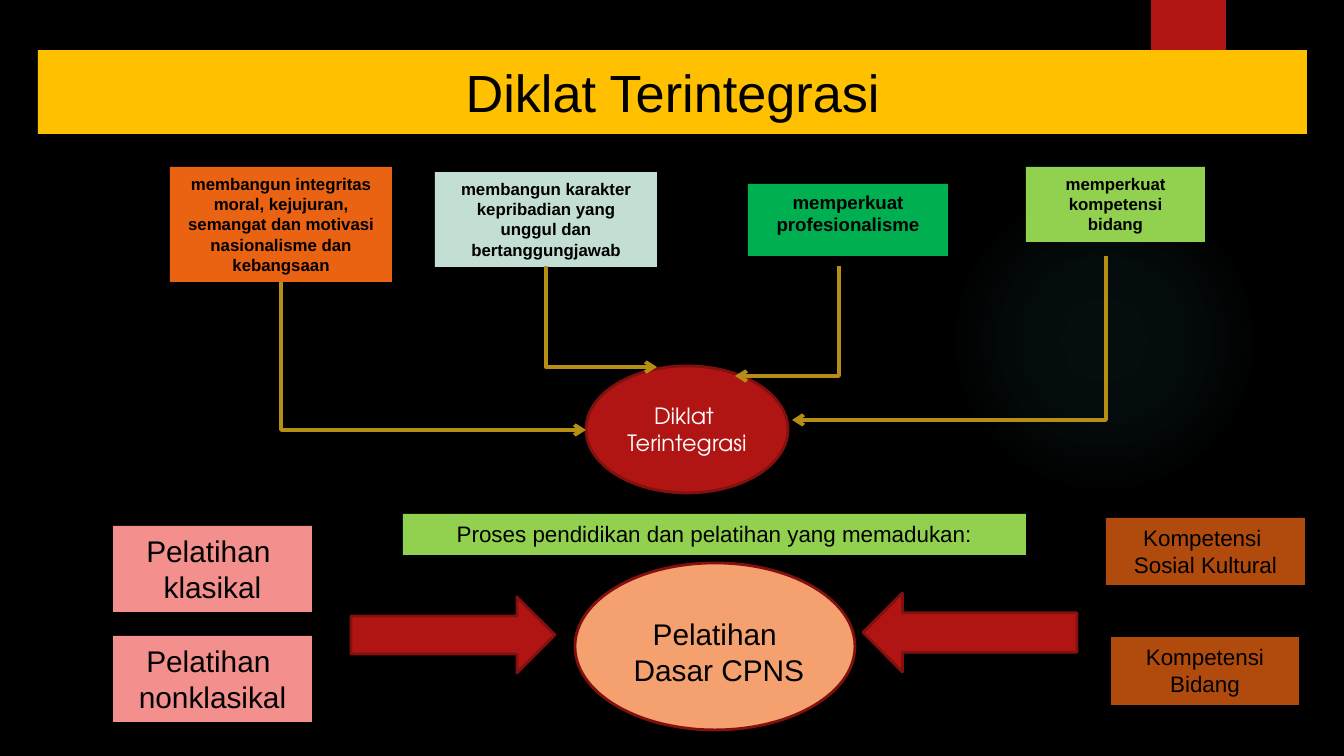
from lxml import etree
from pptx import Presentation
from pptx.dml.color import RGBColor
from pptx.enum.shapes import MSO_CONNECTOR, MSO_SHAPE
from pptx.enum.text import MSO_ANCHOR, PP_ALIGN
from pptx.oxml import parse_xml
from pptx.oxml.ns import nsdecls, qn
from pptx.util import Pt

PX = 914400 / 134.4
RECT, OVAL = MSO_SHAPE.RECTANGLE, MSO_SHAPE.OVAL
RIGHT_ARROW, LEFT_ARROW = MSO_SHAPE.RIGHT_ARROW, MSO_SHAPE.LEFT_ARROW
ELBOW = MSO_CONNECTOR.ELBOW
CENTER = PP_ALIGN.CENTER
TOP, MIDDLE = MSO_ANCHOR.TOP, MSO_ANCHOR.MIDDLE

BLACK = RGBColor(0x00, 0x00, 0x00)
WHITE = RGBColor(0xFF, 0xFF, 0xFF)
RED = RGBColor(0xB0, 0x15, 0x13)
DARK_RED = RGBColor(0x82, 0x10, 0x0E)
AMBER = RGBColor(0xFF, 0xC0, 0x00)
GOLD = RGBColor(0xB6, 0x8E, 0x15)
ORANGE = RGBColor(0xEA, 0x63, 0x12)
MINT = RGBColor(0xC3, 0xDE, 0xD3)
GREEN = RGBColor(0x00, 0xB0, 0x50)
LIME = RGBColor(0x92, 0xD0, 0x50)
PINK = RGBColor(0xF3, 0x8F, 0x8D)
BROWN = RGBColor(0xB0, 0x4A, 0x0D)
PEACH = RGBColor(0xF4, 0xA1, 0x6F)
GLOW_STOPS = ((0, 7), (36, 6), (69, 0))


def px(*lengths):
    """Turn pixel lengths into EMU."""
    return [round(length * PX) for length in lengths]


def write(frame, lines, size, color=BLACK, bold=False, font="Arial", anchor=TOP):
    """Fill a text frame with centred paragraphs."""
    frame.word_wrap = True
    frame.vertical_anchor = anchor
    frame.text = "\n".join(lines)
    for paragraph in frame.paragraphs:
        paragraph.alignment = CENTER
        paragraph.font.size = Pt(size)
        paragraph.font.name = font
        paragraph.font.bold = bold
        paragraph.font.color.rgb = color


def add_block(shapes, kind, box, fill, outline=None):
    """Add a flat preset shape, outlined if a colour is given."""
    block = shapes.add_shape(kind, *px(*box))
    block.shadow.inherit = False
    block.fill.solid()
    block.fill.fore_color.rgb = fill
    if outline is None:
        block.line.fill.background()
    else:
        block.line.color.rgb = outline
        block.line.width = Pt(1.5)
    return block


def add_label(shapes, box, fill, lines, size, bold=False):
    """Add a filled rectangle with text."""
    label = add_block(shapes, RECT, box, fill)
    write(label.text_frame, lines, size, bold=bold)


def add_hub(shapes, box, text_box, fill, lines, size, color, font):
    """Group an ellipse with its text, placed relative to the ellipse."""
    left, top = box[:2]
    dx, dy, width, height = text_box
    hub = shapes.add_group_shape().shapes
    add_block(hub, OVAL, box, fill, DARK_RED)
    caption = hub.add_textbox(*px(left + dx, top + dy, width, height))
    write(caption.text_frame, lines, size, color, font=font)


def add_elbow(shapes, start, end):
    """Draw an arrow that goes down from start and then sideways to end."""
    (x1, y1), (x2, y2) = start, end
    run, drop = abs(x2 - x1), y2 - y1
    left, top = (x1 + x2 - drop) / 2, (y1 + y2 - run) / 2
    elbow = shapes.add_connector(ELBOW, *px(left, top, left + drop, top + run))
    elbow.line.color.rgb = GOLD
    elbow.line.width = Pt(2)
    properties = elbow._element.spPr
    properties.find(qn("a:prstGeom")).set("prst", "bentConnector2")
    frame = properties.find(qn("a:xfrm"))
    if x2 > x1:
        frame.set("rot", "16200000")
        frame.set("flipH", "1")
    else:
        frame.set("rot", "5400000")
    etree.SubElement(properties.find(qn("a:ln")), qn("a:tailEnd"), type="arrow")
    etree.SubElement(properties, qn("a:effectLst"))


def add_backdrop(slide, box):
    """Paint the black background, the faint glow and the red tab."""
    left, top = box[:2]
    slide.background.fill.solid()
    slide.background.fill.fore_color.rgb = BLACK
    glow = add_block(slide.shapes, OVAL, (left + 949, top + 185, 310, 310), BLACK)
    stops = "".join(
        f'<a:gs pos="{at * 1000}"><a:srgbClr val="50B9C1">'
        f'<a:alpha val="{alpha * 1000}"/></a:srgbClr></a:gs>'
        for at, alpha in GLOW_STOPS
    )
    gradient = parse_xml(
        f'<a:gradFill {nsdecls("a")}><a:gsLst>{stops}</a:gsLst><a:path path="circle">'
        '<a:fillToRect l="50000" t="50000" r="50000" b="50000"/></a:path></a:gradFill>'
    )
    properties = glow._element.spPr
    properties.replace(properties.find(qn("a:solidFill")), gradient)
    add_block(slide.shapes, RECT, (left + 1151, top, 75, 126), RED)


def place_title(slide, box):
    """Turn the title placeholder into the amber banner."""
    title = slide.shapes.title
    title.left, title.top, title.width, title.height = px(*box)
    title.fill.solid()
    title.fill.fore_color.rgb = AMBER
    write(title.text_frame, ["Diklat Terintegrasi"], 28, anchor=MIDDLE)
    tree = slide.shapes._spTree
    tree.remove(title._element)
    tree.append(title._element)


def add_goals(shapes, box):
    """Place the four goals and lead each to the integrated training hub."""
    left, top = box[:2]
    goals = (
        ((0, 0, 222, 115), ORANGE, 9, (111, 115), (416, 263),
         "membangun integritas moral, kejujuran, semangat dan motivasi "
         "nasionalisme dan kebangsaan"),
        ((265, 5, 222, 95), MINT, 9, (376, 99), (487, 200),
         "membangun karakter kepribadian yang unggul dan bertanggungjawab"),
        ((578, 17, 200, 72), GREEN, 10, (669, 99), (565, 209),
         "memperkuat profesionalisme"),
        ((856, 0, 179, 75), LIME, 9, (936, 89), (622, 253),
         "memperkuat kompetensi bidang"),
    )
    add_hub(shapes, (left + 416, top + 199, 202, 127), (27, 30, 148, 67), RED,
            ["Diklat ", "Terintegrasi"], 12, WHITE, "TeX Gyre Adventor")
    for (dx, dy, width, height), fill, size, start, end, text in goals:
        add_label(shapes, (left + dx, top + dy, width, height), fill, [text], size, True)
        add_elbow(shapes, (left + start[0], top + start[1]), (left + end[0], top + end[1]))


def add_process(shapes, box):
    """Place the training forms and competences that feed basic training."""
    left, top = box[:2]
    labels = (
        ((290, 0, 623, 41), LIME, 12, ["Proses pendidikan dan pelatihan yang memadukan:"]),
        ((0, 12, 199, 86), PINK, 16, ["Pelatihan ", "klasikal"]),
        ((0, 122, 199, 86), PINK, 16, ["Pelatihan ", "nonklasikal"]),
        ((993, 4, 199, 67), BROWN, 12, ["Kompetensi ", "Sosial Kultural"]),
        ((998, 123, 188, 68), BROWN, 12, ["Kompetensi Bidang"]),
    )
    for (dx, dy, width, height), fill, size, lines in labels:
        add_label(shapes, (left + dx, top + dy, width, height), fill, lines, size)
    add_block(shapes, RIGHT_ARROW, (left + 238, top + 83, 204, 76), RED, DARK_RED)
    add_block(shapes, LEFT_ARROW, (left + 750, top + 79, 214, 79), RED, DARK_RED)
    add_hub(shapes, (left + 462, top + 49, 280, 167), (33, 46, 222, 86), PEACH,
            ["Pelatihan ", "Dasar CPNS"], 16, BLACK, "Arial")


def main():
    """Build and save the slide."""
    deck = Presentation()
    deck.slide_width, deck.slide_height = px(1344, 756)
    slide = deck.slides.add_slide(deck.slide_layouts[5])
    add_backdrop(slide, (0, 0, 1344, 756))
    place_title(slide, (38, 50, 1269, 84))
    add_goals(slide.shapes, (170, 167, 1035, 326))
    add_process(slide.shapes, (113, 514, 1192, 216))
    deck.save("out.pptx")


if __name__ == "__main__":
    main()
